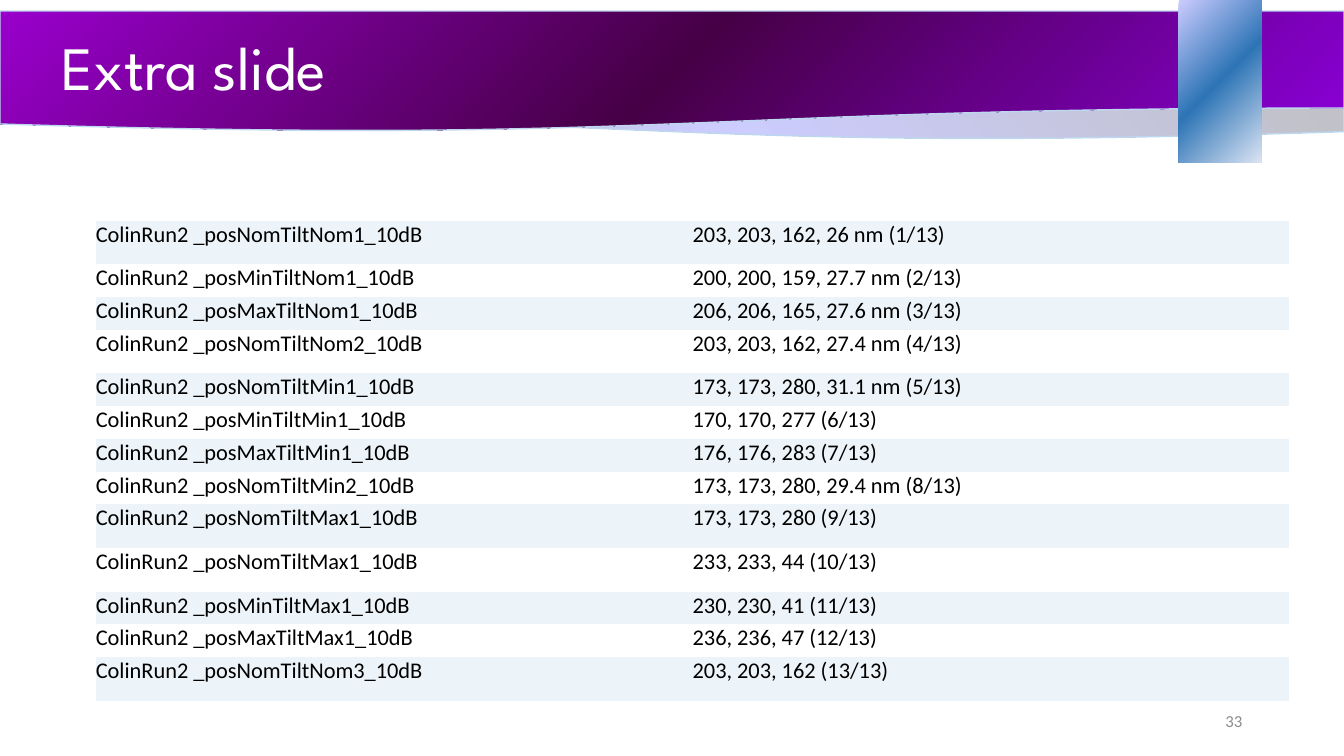
from dataclasses import dataclass

from lxml.etree import SubElement
from pptx import Presentation
from pptx.dml.color import RGBColor
from pptx.enum.shapes import MSO_SHAPE
from pptx.enum.text import MSO_ANCHOR, PP_ALIGN
from pptx.oxml import parse_xml
from pptx.oxml.ns import nsdecls, qn
from pptx.util import Inches, Pt

COLUMNS, ROWS = 133.3, 75
LINEAR = '<a:lin ang="13500000" scaled="0"/>'
CORNER = '<a:path path="circle"><a:fillToRect l="100000" t="100000"/></a:path>'
PLAIN_TABLE = "{2D5ABB26-0587-4C30-8999-92F81FD0307C}"

READINGS = [
    ("NomTiltNom1", "203, 203, 162, 26 nm"),
    ("MinTiltNom1", "200, 200, 159, 27.7 nm"),
    ("MaxTiltNom1", "206, 206, 165, 27.6 nm"),
    ("NomTiltNom2", "203, 203, 162, 27.4 nm"),
    ("NomTiltMin1", "173, 173, 280, 31.1 nm"),
    ("MinTiltMin1", "170, 170, 277"),
    ("MaxTiltMin1", "176, 176, 283"),
    ("NomTiltMin2", "173, 173, 280, 29.4 nm"),
    ("NomTiltMax1", "173, 173, 280"),
    ("NomTiltMax1", "233, 233, 44"),
    ("MinTiltMax1", "230, 230, 41"),
    ("MaxTiltMax1", "236, 236, 47"),
    ("NomTiltNom3", "203, 203, 162"),
]
TALL_ROWS = {0, 3, 8, 9, 12}


@dataclass(frozen=True)
class Theme:
    heading_font: str = "League Spartan"
    body_font: str = "Calibri"
    title_size: int = 44
    table_size: int = 16
    number_size: int = 12
    white: str = "FFFFFF"
    black: str = "000000"
    grey: str = "8C8C8C"
    band: str = "EDF4F9"
    wave_line: str = "BDD7EE"
    back_wave: tuple = ("A6A6A6", "CCCCFF", "BFBFBF")
    front_wave: tuple = ("8A00D6", "460046", "9900CC")
    ribbon: tuple = ("DAE3F3", "2E75B6", "CCCCFF")


class SlideBuilder:
    def __init__(self, deck, theme):
        self.deck = deck
        self.theme = theme
        self.page = deck.slides.add_slide(deck.slide_layouts[6])

    def across(self, columns):
        return round(self.deck.slide_width * columns / COLUMNS)

    def down(self, rows):
        return round(self.deck.slide_height * rows / ROWS)

    def place(self, left, top, width, height):
        return self.across(left), self.down(top), self.across(width), self.down(height)

    def gradient_shape(self, preset, area, colours, direction, line=None, flipped=False):
        shape = self.page.shapes.add_shape(preset, *self.place(*area))
        shape.shadow.inherit = False
        if line:
            shape.line.color.rgb = RGBColor.from_string(line)
            shape.line.width = Pt(1)
        else:
            shape.line.fill.background()
        stops = "".join(
            f'<a:gs pos="{index * 50000}"><a:srgbClr val="{colour}"/></a:gs>'
            for index, colour in enumerate(colours)
        )
        gradient = parse_xml(
            f'<a:gradFill {nsdecls("a")} rotWithShape="1">'
            f"<a:gsLst>{stops}</a:gsLst>{direction}</a:gradFill>"
        )
        properties = shape.element.spPr
        properties.find(qn("a:prstGeom")).addnext(gradient)
        if flipped:
            properties.find(qn("a:xfrm")).set("flipH", "1")

    def style(self, para, font, size, colour):
        for span in para.runs:
            span.font.name = font
            span.font.size = Pt(size)
            span.font.color.rgb = RGBColor.from_string(colour)

    def text(self, area, words, font, size, colour, align=PP_ALIGN.LEFT, spacing=1.0):
        box = self.page.shapes.add_textbox(*self.place(*area))
        frame = box.text_frame
        frame.word_wrap = True
        frame.vertical_anchor = MSO_ANCHOR.MIDDLE
        frame.text = words
        para = frame.paragraphs[0]
        para.alignment = align
        para.line_spacing = spacing
        self.style(para, font, size, colour)

    def table(self, area, records, heights):
        frame = self.page.shapes.add_table(len(records), len(records[0]), *self.place(*area))
        table = frame.table
        table.first_row = table.horz_banding = False
        properties = frame.element.find(".//" + qn("a:tblPr"))
        style_id = properties.find(qn("a:tableStyleId"))
        if style_id is None:
            style_id = SubElement(properties, qn("a:tableStyleId"))
        style_id.text = PLAIN_TABLE
        for index, (record, height) in enumerate(zip(records, heights)):
            table.rows[index].height = self.down(height)
            fill = self.theme.white if index % 2 else self.theme.band
            for cell, words in zip(table.rows[index].cells, record):
                cell.margin_left = cell.margin_right = 0
                cell.margin_top = cell.margin_bottom = 0
                cell.fill.solid()
                cell.fill.fore_color.rgb = RGBColor.from_string(fill)
                cell.text_frame.text = words
                self.style(cell.text_frame.paragraphs[0], self.theme.body_font,
                           self.theme.table_size, self.theme.black)


def main():
    deck = Presentation()
    deck.slide_width, deck.slide_height = Inches(13.33), Inches(7.5)
    theme = Theme()
    slide = SlideBuilder(deck, theme)

    wave = MSO_SHAPE.FLOWCHART_DOCUMENT
    slide.gradient_shape(wave, (0, 1.3, COLUMNS, 12.6), theme.back_wave, LINEAR,
                         theme.wave_line, flipped=True)
    slide.gradient_shape(wave, (0, 1.1, COLUMNS, 12), theme.front_wave, LINEAR,
                         theme.wave_line)
    slide.gradient_shape(MSO_SHAPE.RECTANGLE, (116.9, 0, 8.2, 16.1), theme.ribbon, CORNER)

    records = [
        (f"ColinRun2 _pos{setting}_10dB", f"{values} ({number}/{len(READINGS)})")
        for number, (setting, values) in enumerate(READINGS, 1)
    ]
    heights = [4.33 if index in TALL_ROWS else 3.25 for index in range(len(records))]
    slide.table((9.5, 21.9, 118.4, sum(heights)), records, heights)

    slide.text((94.2, 69.5, 30, 4), "33", theme.body_font, theme.number_size,
               theme.grey, align=PP_ALIGN.RIGHT)
    slide.text((5.1, 1.2, 115, 11.6), "Extra slide", theme.heading_font,
               theme.title_size, theme.white, spacing=0.9)
    deck.save("out.pptx")


if __name__ == "__main__":
    main()
